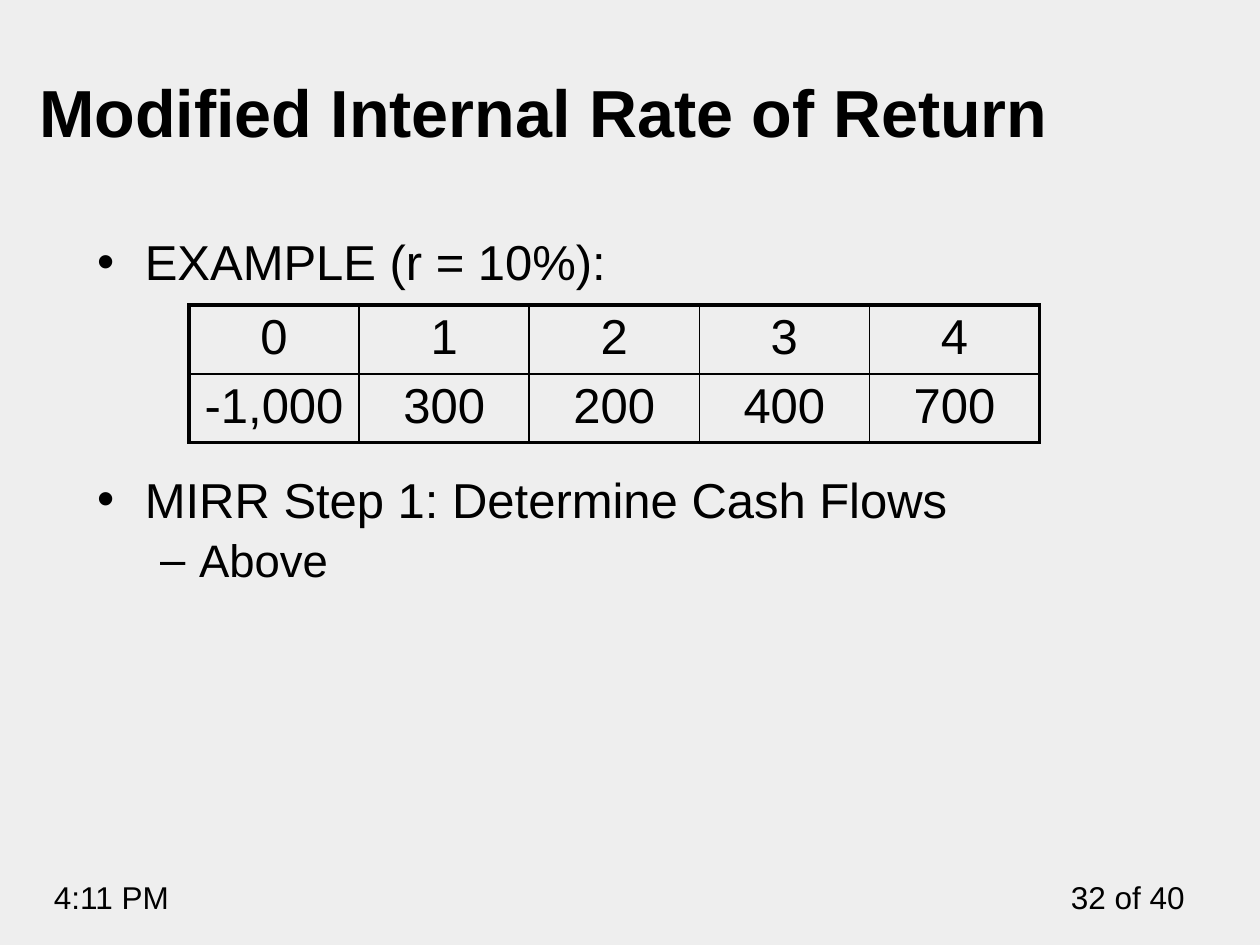
import pptx
import pptx.util
import pptx.dml.color
import pptx.enum.text
from pptx.oxml import parse_xml
from pptx.oxml.ns import nsdecls

Inches = pptx.util.Inches
Pt = pptx.util.Pt
ALIGN = pptx.enum.text.PP_ALIGN
ANCHOR = pptx.enum.text.MSO_ANCHOR
BLACK = pptx.dml.color.RGBColor(0x00, 0x00, 0x00)
PALE_GREY = pptx.dml.color.RGBColor(0xEE, 0xEE, 0xEE)


def format_text(paragraph, size, align=ALIGN.LEFT, bold=False):
    paragraph.alignment = align
    formats = {"name": "Arial", "size": Pt(size), "bold": bold}
    for attribute, value in formats.items():
        setattr(paragraph.font, attribute, value)
    paragraph.font.color.rgb = BLACK


def place(shape, left, top, width, height):
    shape.left, shape.top = Inches(left), Inches(top)
    shape.width, shape.height = Inches(width), Inches(height)


deck = pptx.Presentation()
deck.slide_width, deck.slide_height = Inches(10), Inches(7.5)
slide = deck.slides.add_slide(deck.slide_layouts[1])
slide.background.fill.solid()
slide.background.fill.fore_color.rgb = PALE_GREY

# Footer
for text, left, width, align in [
    ("32 of 40", 8.33, 1.17, ALIGN.RIGHT),
    ("4:11 PM", 0.33, 1.58, ALIGN.LEFT),
]:
    footer = slide.shapes.add_textbox(
        Inches(left), Inches(6.92), Inches(width), Inches(0.4))
    footer.text_frame.word_wrap = True
    footer.text_frame.text = text
    format_text(footer.text_frame.paragraphs[0], 18, align)

# Title
title = slide.shapes.title
place(title, 0.21, 0.25, 8.77, 1)
title.text_frame.text = "Modified Internal Rate of Return"
title.text_frame.vertical_anchor = ANCHOR.BOTTOM
title.text_frame.auto_size = pptx.enum.text.MSO_AUTO_SIZE.NONE
format_text(title.text_frame.paragraphs[0], 38, bold=True)

# Steps, with room for the cash flow table before the second one
steps = slide.placeholders[1]
place(steps, 0.67, 1.75, 8.42, 5.08)
steps.text_frame.auto_size = pptx.enum.text.MSO_AUTO_SIZE.NONE
steps.text_frame.margin_top = Inches(0.09)
for index, (text, level, size, bullet, margin, hanging, space) in enumerate([
    ("EXAMPLE (r = 10%):", 0, 28, "•", 0.38, 0.38, 0),
    ("MIRR Step 1: Determine Cash Flows", 0, 28, "•", 0.38, 0.38, 102),
    ("Above", 1, 26, "–", 0.81, 0.31, 2.5),
]):
    step = (steps.text_frame.add_paragraph() if index
            else steps.text_frame.paragraphs[0])
    step.text = text
    step.level = level
    step.space_before = Pt(space)
    properties = step._p.get_or_add_pPr()
    properties.set("marL", str(Inches(margin)))
    properties.set("indent", str(-Inches(hanging)))
    properties.append(parse_xml(f'<a:buChar {nsdecls("a")} char="{bullet}"/>'))
    format_text(step, size)

# Cash flows by year
cash_flows = [
    ["0", "1", "2", "3", "4"],
    ["-1,000", "300", "200", "400", "700"],
]
last_row, last_column = len(cash_flows) - 1, len(cash_flows[0]) - 1
table = slide.shapes.add_table(
    last_row + 1, last_column + 1,
    Inches(1.5), Inches(2.42), Inches(6.75), Inches(1.06)).table
table.first_row = table.horz_banding = False
for column in table.columns:
    column.width = Inches(1.35)
for r, values in enumerate(cash_flows):
    table.rows[r].height = Inches(0.53)
    for c, value in enumerate(values):
        cell = table.cell(r, c)
        cell.text = value
        cell.margin_top = cell.margin_bottom = Inches(0.04)
        format_text(cell.text_frame.paragraphs[0], 28, ALIGN.CENTER)
        outer_sides = {"L": c == 0, "R": c == last_column,
                       "T": r == 0, "B": r == last_row}
        for side, is_outer in outer_sides.items():
            cell._tc.get_or_add_tcPr().append(parse_xml(
                f'<a:ln{side} {nsdecls("a")} w="{Pt(2.25 if is_outer else 1)}">'
                f'<a:solidFill><a:srgbClr val="{BLACK}"/></a:solidFill>'
                f'</a:ln{side}>'))
        cell.fill.background()

deck.save("out.pptx")
